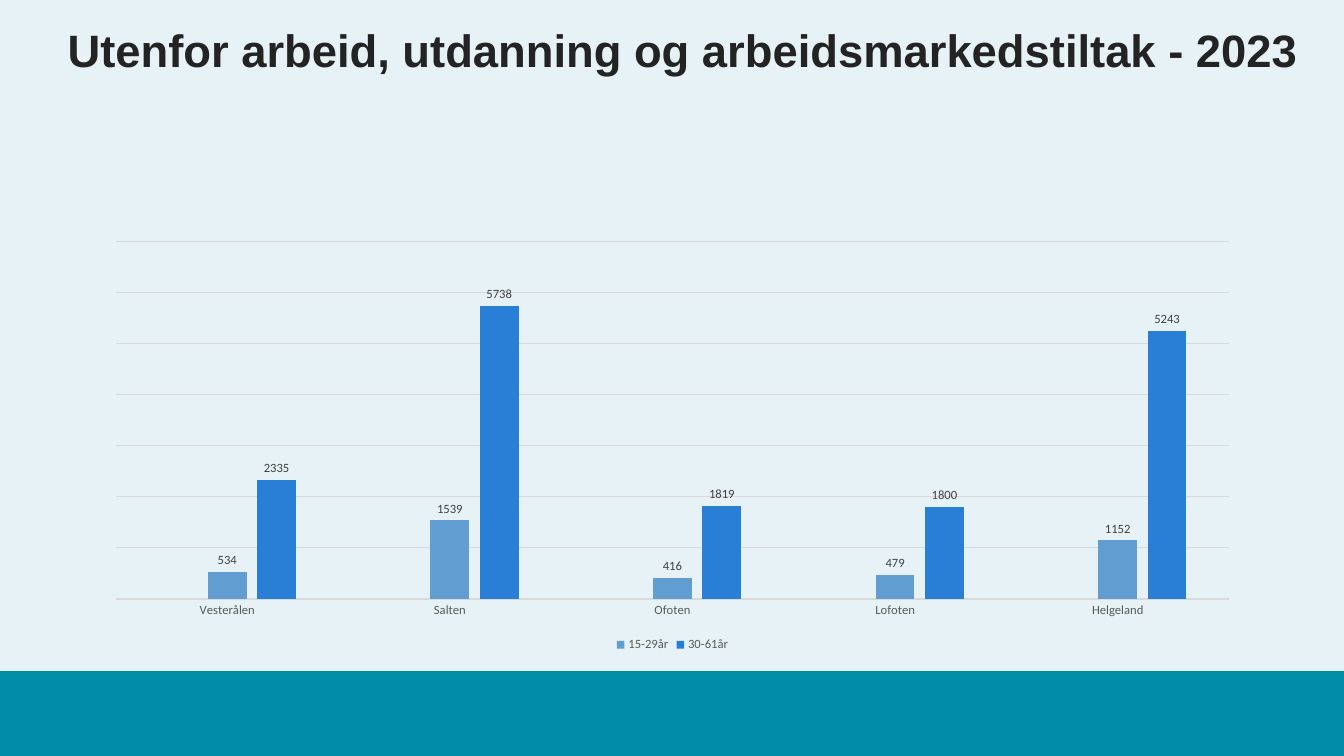
from dataclasses import dataclass

from lxml import etree
from pptx import Presentation
from pptx.chart.data import CategoryChartData
from pptx.dml.color import RGBColor
from pptx.enum import chart as ch, shapes, text
from pptx.util import Inches, Pt


@dataclass(frozen=True)
class Theme:
    background: str = "E6F2F6"
    band: str = "008DA8"
    title: str = "242323"
    axis_text: str = "595959"
    label_text: str = "404040"
    grid: str = "D9D9D9"
    series: tuple = ("4A66AC", "629DD1", "297FD5")
    title_font: str = "Arial"
    chart_font: str = "Calibri"
    title_size: float = 32.4
    chart_size: float = 9


def set_format(target, values):
    for name, value in values.items():
        setattr(target, name, value)


def set_font(font, name, size, color, bold=False):
    set_format(font, {"name": name, "size": Pt(size), "bold": bold})
    font.color.rgb = RGBColor.from_string(color)


class SlideBuilder:
    def __init__(self, prs, theme):
        self.theme = theme
        self.slide = prs.slides.add_slide(prs.slide_layouts[5])
        self.fill(self.slide.background.fill, theme.background)

    def fill(self, fill, color):
        fill.solid()
        fill.fore_color.rgb = RGBColor.from_string(color)

    def band(self, *box):
        sp = self.slide.shapes.add_shape(
            shapes.MSO_SHAPE.RECTANGLE, *map(Inches, box))
        sp.shadow.inherit = False
        self.fill(sp.fill, self.theme.band)
        self.fill(sp.line.fill, self.theme.band)
        sp.line.width = Pt(1)

    def title(self, content, left, top, width, height):
        sp = self.slide.shapes.title
        set_format(sp, {"left": Inches(left), "top": Inches(top),
                        "width": Inches(width), "height": Inches(height)})
        tf = sp.text_frame
        set_format(tf, {"word_wrap": True, "auto_size": text.MSO_AUTO_SIZE.NONE,
                        "vertical_anchor": text.MSO_ANCHOR.MIDDLE})
        p = tf.paragraphs[0]
        set_format(p, {"alignment": text.PP_ALIGN.LEFT, "line_spacing": 0.9})
        r = p.add_run()
        r.text = content
        set_font(r.font, self.theme.title_font, self.theme.title_size,
                 self.theme.title, bold=True)

    def column_chart(self, categories, series, *box):
        t = self.theme
        data = CategoryChartData(number_format="0")
        data.categories = categories
        for name, values in series.items():
            data.add_series(name, values)
        chart = self.slide.shapes.add_chart(
            ch.XL_CHART_TYPE.COLUMN_CLUSTERED, *map(Inches, box), data).chart
        set_format(chart, {"has_title": False, "has_legend": True})
        set_font(chart.font, t.chart_font, t.chart_size, t.axis_text)
        self.legend(chart.legend, hidden_entry=0)
        self.axes(chart)

        plot = chart.plots[0]
        set_format(plot, {"gap_width": 219, "overlap": -27,
                          "vary_by_categories": False})
        for s, color in zip(plot.series, t.series):
            self.fill(s.format.fill, color)
            labels = s.data_labels
            set_format(labels, {
                "show_value": True, "number_format": "0",
                "number_format_is_linked": False,
                "position": ch.XL_LABEL_POSITION.OUTSIDE_END})
            set_font(labels.font, t.chart_font, t.chart_size, t.label_text)

    def legend(self, legend, hidden_entry):
        """Place the legend below and drop the entry of the empty series."""
        set_format(legend, {"position": ch.XL_LEGEND_POSITION.BOTTOM,
                            "include_in_layout": False})
        set_font(legend.font, self.theme.chart_font, self.theme.chart_size,
                 self.theme.axis_text)
        node = legend._element
        ns = etree.QName(node).namespace
        entry = etree.Element(f"{{{ns}}}legendEntry")
        for tag, value in (("idx", str(hidden_entry)), ("delete", "1")):
            etree.SubElement(entry, f"{{{ns}}}{tag}", val=value)
        node.find(f"{{{ns}}}legendPos").addnext(entry)

    def axes(self, chart):
        t = self.theme
        cat, val = chart.category_axis, chart.value_axis
        set_format(cat, {"major_tick_mark": ch.XL_TICK_MARK.NONE,
                         "has_major_gridlines": False})
        set_font(cat.tick_labels.font, t.chart_font, t.chart_size, t.axis_text)
        set_format(val, {"visible": False, "has_major_gridlines": True,
                         "minimum_scale": 0, "maximum_scale": 7000,
                         "major_unit": 1000})
        for line in (cat.format.line, val.major_gridlines.format.line):
            self.fill(line.fill, t.grid)
            line.width = Pt(0.75)


def main():
    prs = Presentation()
    prs.slide_width, prs.slide_height = Inches(13.33), Inches(7.5)
    s = SlideBuilder(prs, Theme())
    s.band(0, 6.66, 13.33, 0.84)
    s.title("Utenfor arbeid, utdanning og arbeidsmarkedstiltak - 2023",
            0.57, 0.1, 12.52, 0.85)
    regions = ["Vesterålen", "Salten", "Ofoten", "Lofoten", "Helgeland"]
    s.column_chart(regions, {
        "Series 1": [None] * len(regions),
        "15-29år": [534, 1539, 416, 479, 1152],
        "30-61år": [2335, 5738, 1819, 1800, 5243],
    }, 0.92, 2.31, 11.5, 4.2)
    prs.save("out.pptx")


if __name__ == "__main__":
    main()
